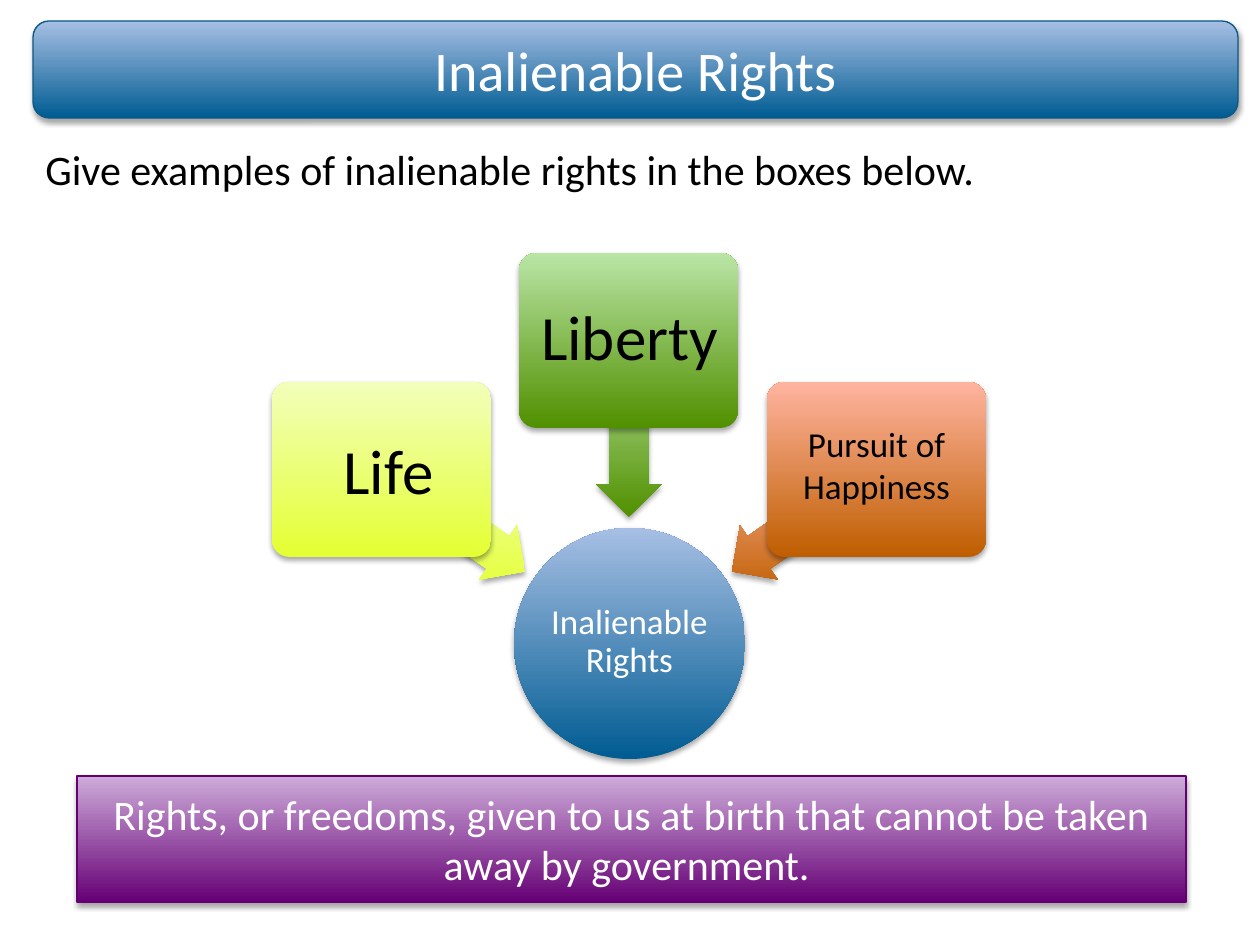
from lxml import etree
from pptx import Presentation
from pptx import util as u
from pptx.dml.color import RGBColor
from pptx.enum import shapes, text
from pptx.oxml.ns import qn

EMU_PER_PX = 914400 / 126


def px(n):
    return u.Emu(round(n * EMU_PER_PX))


def rgb(value):
    return RGBColor.from_string(value)


class Deck:
    font = "Calibri"
    white, black = "FFFFFF", "000000"
    blue = ("005C92", "A7BFE4")
    yellow = ("E4FF33", "F2FFBB")
    green = ("519000", "BAE5A6")
    orange = ("BF5E00", "FFB4A0")
    purple = ("660075", "CEACDA")

    def __init__(self, prs):
        self.s = prs.slides.add_slide(prs.slide_layouts[6])

    def shadow(self, sp):
        sp.shadow.inherit = False
        effects = sp._element.spPr.find(qn("a:effectLst"))
        outer = etree.SubElement(
            effects, qn("a:outerShdw"), blurRad=str(u.Pt(3.1)),
            dist=str(u.Pt(1.8)), dir="5400000", rotWithShape="0")
        color = etree.SubElement(outer, qn("a:srgbClr"), val=self.black)
        etree.SubElement(color, qn("a:alpha"), val="35000")

    def shape(self, kind, x, y, w, h, colors, line=None, adj=(), rotation=0):
        sp = self.s.shapes.add_shape(kind, px(x), px(y), px(w), px(h))
        sp.rotation = rotation
        for i, value in enumerate(adj):
            sp.adjustments[i] = value
        # Vertical gradient, dark at the bottom whatever the rotation
        sp.fill.gradient()
        sp.fill.gradient_angle = 90
        for stop, color in zip(sp.fill.gradient_stops, colors):
            stop.color.rgb = rgb(color)
        sp._element.spPr.find(qn("a:gradFill")).set("rotWithShape", "0")
        if line:
            sp.line.color.rgb = rgb(line)
            sp.line.width = u.Pt(0.75)
        else:
            sp.line.fill.background()
        self.shadow(sp)
        return sp

    def caption(self, sp, words, size, color, align=text.PP_ALIGN.CENTER,
                anchor=text.MSO_ANCHOR.MIDDLE):
        tf = sp.text_frame
        tf.word_wrap = True
        tf.vertical_anchor = anchor
        p = tf.paragraphs[0]
        p.text = words
        p.alignment = align
        p.font.name = self.font
        p.font.size = u.Pt(size)
        p.font.color.rgb = rgb(color)
        return tf

    def label(self, x, y, w, h, words, size, color, **layout):
        sp = self.s.shapes.add_textbox(px(x), px(y), px(w), px(h))
        return self.caption(sp, words, size, color, **layout)


def main():
    prs = Presentation()
    prs.slide_width, prs.slide_height = px(1260), px(945)
    deck = Deck(prs)
    kinds = shapes.MSO_SHAPE

    # Title bar
    title = deck.shape(kinds.ROUNDED_RECTANGLE, 33, 21, 1205, 97, deck.blue,
                       line="095886")
    deck.caption(title, "Inalienable Rights", 32, deck.white)

    # Central circle
    deck.shape(kinds.OVAL, 514, 528, 231, 231, deck.blue)
    tf = deck.label(548, 561, 163, 163, "Inalienable Rights", 20, deck.white)
    tf.margin_left = tf.margin_right = tf.margin_top = tf.margin_bottom = px(1)
    tf.paragraphs[0].line_spacing = 0.9

    # Three rights, each with an arrow towards the circle
    rights = [
        ("Life", 36, deck.yellow, 272, 382, 365, 488, 215, 286, 404),
        ("Liberty", 36, deck.green, 519, 253, 541, 396, 270, 527, 270),
        ("Pursuit of Happiness", 20, deck.orange, 767, 382, 716, 488, 325,
         774, 399),
    ]
    for _, _, colors, x, y, arrow_x, arrow_y, angle, _, _ in rights:
        deck.shape(kinds.LEFT_ARROW, arrow_x, arrow_y, 176, 66, colors,
                   adj=(0.6, 0.5), rotation=angle)
        deck.shape(kinds.ROUNDED_RECTANGLE, x, y, 219, 175, colors, adj=(0.1,))

    # Definition
    definition = deck.shape(kinds.RECTANGLE, 77, 776, 1109, 126, deck.purple,
                            line="640072")
    deck.caption(definition, "Rights, or freedoms, given to us at birth that "
                 "cannot be taken away by government. ", 24, deck.white)

    # Instruction
    tf = deck.label(33, 137, 1205, 63,
                    "Give examples of inalienable rights in the boxes below.",
                    24, deck.black, align=text.PP_ALIGN.LEFT,
                    anchor=text.MSO_ANCHOR.TOP)
    tf.auto_size = text.MSO_AUTO_SIZE.SHAPE_TO_FIT_TEXT

    # Names of the rights
    for words, size, *_, x, y in rights:
        deck.label(x, y, 205, 130, words, size, deck.black)

    prs.save("out.pptx")


if __name__ == "__main__":
    main()
